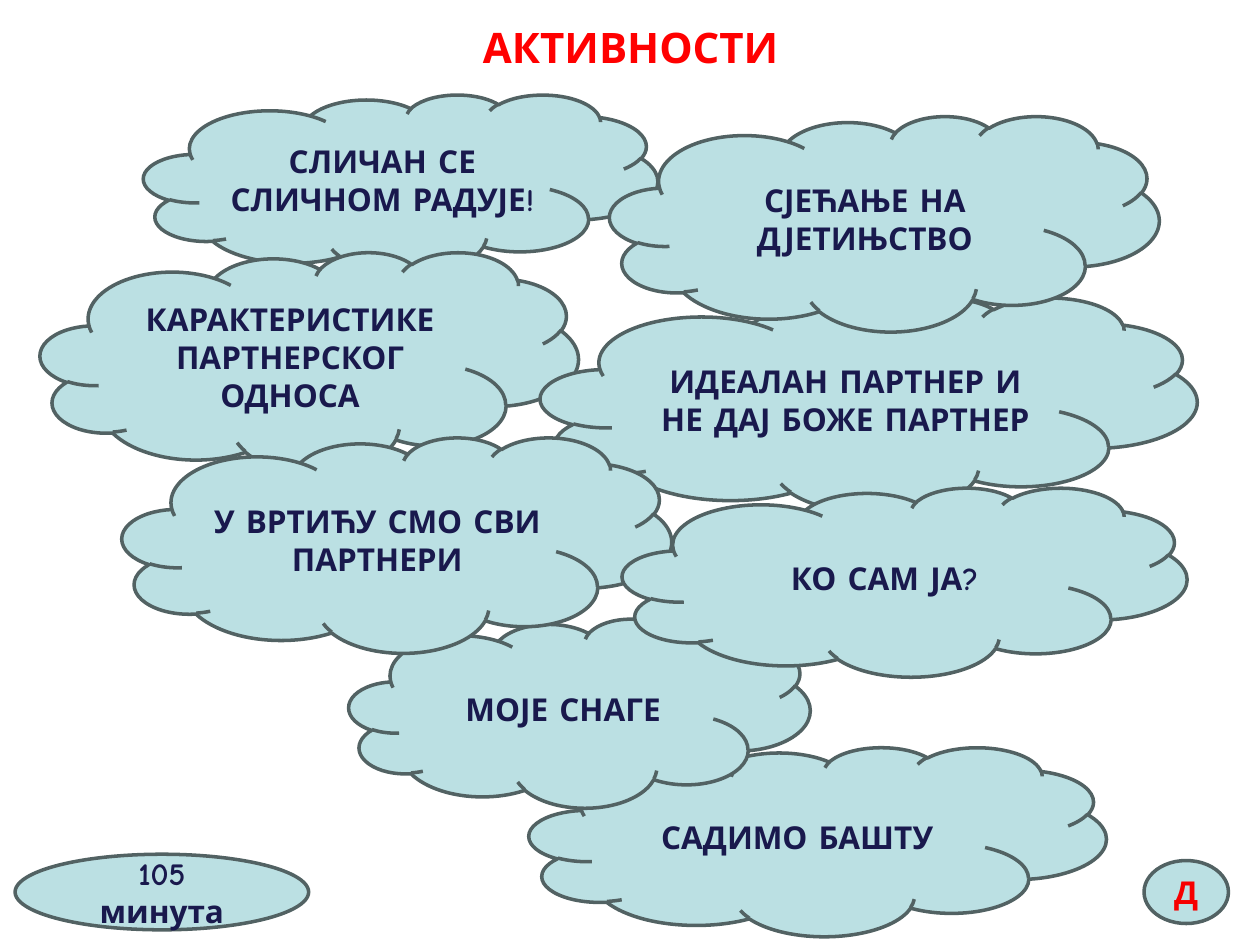
from dataclasses import dataclass

from pptx import Presentation
from pptx.dml.color import RGBColor
from pptx.enum import shapes, text
from pptx.util import Inches, Pt


@dataclass(frozen=True)
class Theme:
    font: str = "Comic Neue"
    fill: str = "BBE0E3"
    line: str = "526263"
    ink: str = "19194D"
    title: str = "FF0000"
    badge: str = "F70000"
    title_size: int = 24
    body_size: int = 18
    line_width: int = 2


THEME = Theme()
CLOUD = shapes.MSO_SHAPE.CLOUD
OVAL = shapes.MSO_SHAPE.OVAL

# Activities from back to front: label and box (left, top, width, height)
ACTIVITIES = [
    ("СЛИЧАН СЕ СЛИЧНОМ РАДУЈЕ!", (1.14, 0.75, 4.08, 1.42)),
    ("КАРАКТЕРИСТИКЕ ПАРТНЕРСКОГ ОДНОСА", (0.32, 2, 4.27, 1.75)),
    ("ИДЕАЛАН ПАРТНЕР И НЕ ДАЈ БОЖЕ ПАРТНЕР", (4.29, 2.36, 5.21, 1.71)),
    ("САДИМО БАШТУ", (4.2, 5.93, 4.58, 1.5)),
    ("МОЈЕ СНАГЕ", (2.77, 4.91, 3.66, 1.5)),
    ("СЈЕЋАЊЕ НА ДЈЕТИЊСТВО", (4.84, 0.92, 4.36, 1.71)),
    ("У ВРТИЋУ СМО СВИ ПАРТНЕРИ", (0.97, 3.47, 4.36, 1.71)),
    ("КО САМ ЈА?", (4.94, 3.87, 4.48, 1.5)),
]


def inches(box):
    return [Inches(v) for v in box]


def write(sp, words, size=THEME.body_size, color=THEME.ink,
          anchor=text.MSO_ANCHOR.MIDDLE):
    tf = sp.text_frame
    tf.word_wrap = True
    tf.vertical_anchor = anchor
    p = tf.paragraphs[0]
    p.alignment = text.PP_ALIGN.CENTER
    r = p.add_run()
    r.text = words
    r.font.name = THEME.font
    r.font.size = Pt(size)
    r.font.bold = True
    r.font.color.rgb = RGBColor.from_string(color)


def add_bubble(s, kind, box, words, **fmt):
    sp = s.shapes.add_shape(kind, *inches(box))
    sp.shadow.inherit = False
    sp.fill.solid()
    sp.fill.fore_color.rgb = RGBColor.from_string(THEME.fill)
    sp.line.color.rgb = RGBColor.from_string(THEME.line)
    sp.line.width = Pt(THEME.line_width)
    write(sp, words, **fmt)


def add_title(s, box, words):
    sp = s.shapes.add_textbox(*inches(box))
    write(sp, words, size=THEME.title_size, color=THEME.title,
          anchor=text.MSO_ANCHOR.TOP)
    sp.text_frame.auto_size = text.MSO_AUTO_SIZE.SHAPE_TO_FIT_TEXT


def add_activities(s, activities):
    for words, box in activities:
        add_bubble(s, CLOUD, box, words)


def main():
    prs = Presentation()
    prs.slide_width, prs.slide_height = Inches(10), Inches(7.5)
    s = prs.slides.add_slide(prs.slide_layouts[6])

    # Heading and overlapping clouds
    add_title(s, (3.65, 0.12, 2.71, 0.5), "АКТИВНОСТИ")
    add_activities(s, ACTIVITIES)

    # Duration and section badge
    add_bubble(s, OVAL, (0.12, 6.78, 2.33, 0.6), "105 минута")
    add_bubble(s, OVAL, (9.08, 6.83, 0.67, 0.5), "Д", color=THEME.badge)

    prs.save("out.pptx")


if __name__ == "__main__":
    main()
